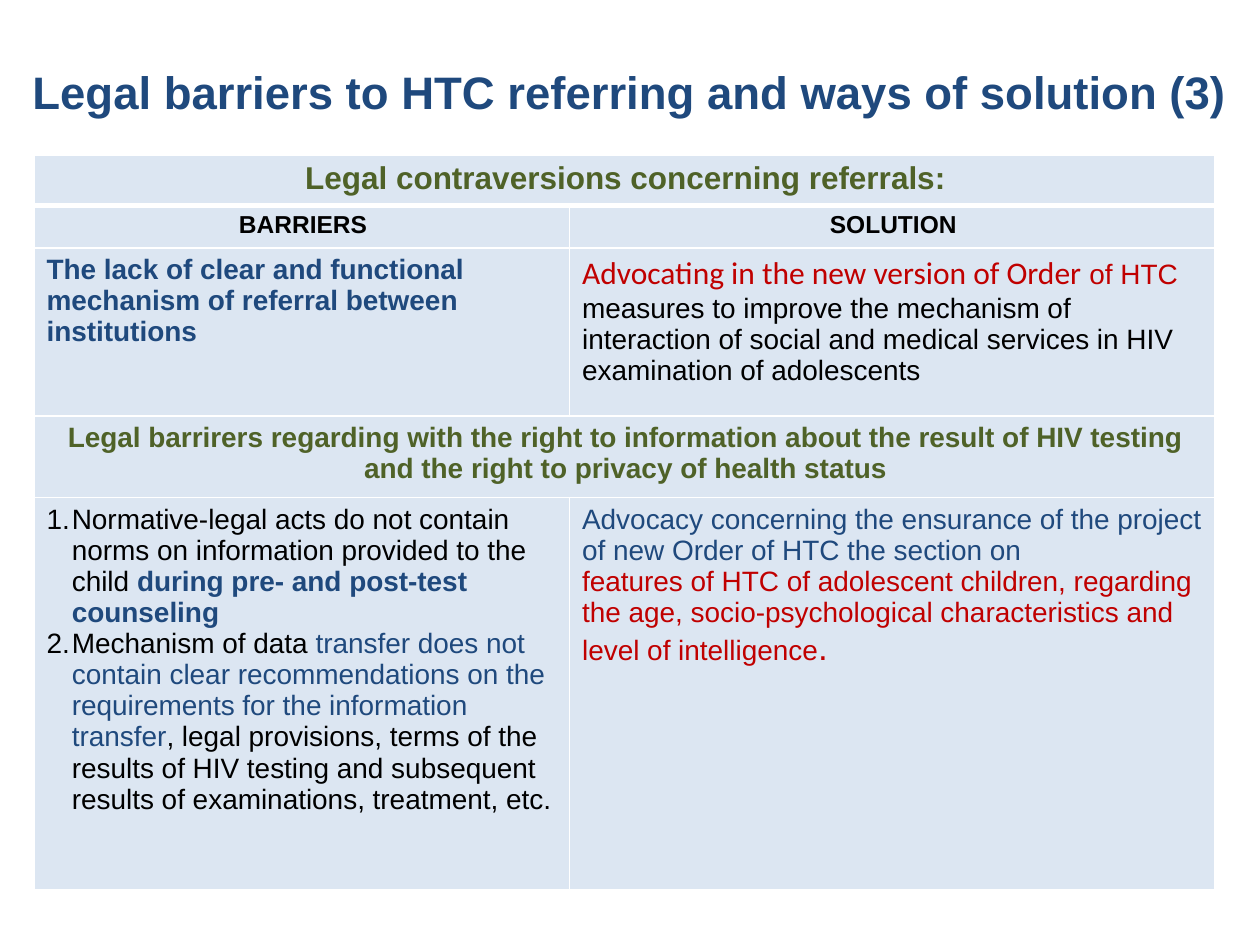
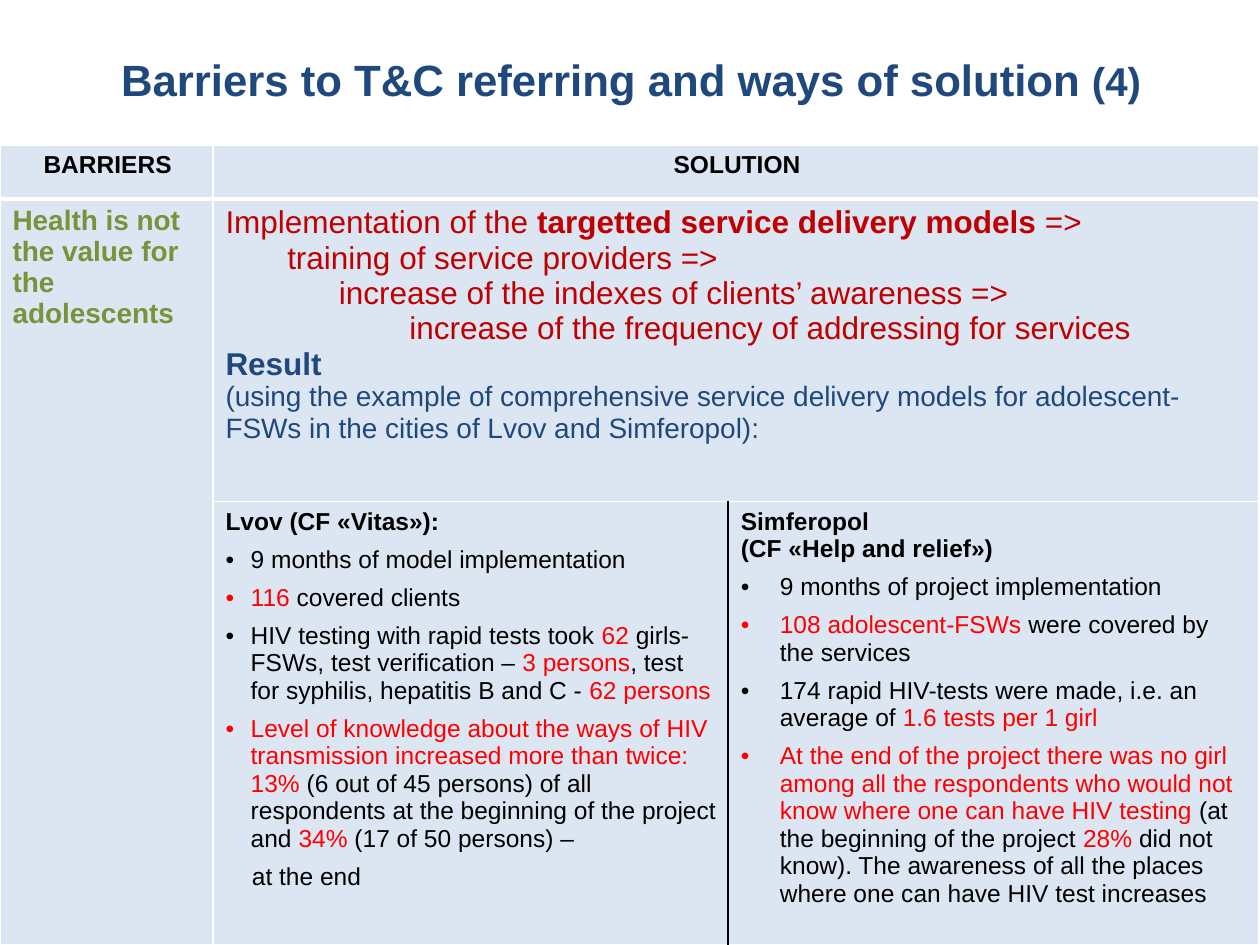
from functools import partial

from lxml.etree import SubElement
from pptx import Presentation
from pptx.dml.color import RGBColor
from pptx.enum.text import MSO_ANCHOR, PP_ALIGN
from pptx.oxml.ns import qn
from pptx.util import Inches, Pt

COLORS = {
    "navy": "1F497D",
    "olive": "4F6228",
    "green": "77933C",
    "crimson": "C00000",
    "red": "FF0000",
    "black": "000000",
    "white": "FFFFFF",
    "panel": "DCE6F2",
}
BULLET = ("buChar", "char", "•")
NUMBER = ("buAutoNum", "type", "arabicPeriod")


def span(text, color="black", size=16, bold=False, name="Arial"):
    return text, color, {"size": Pt(size), "bold": bold, "name": name}


def line(*spans, indent=0, hanging=0, marker=None, **layout):
    """Describe a paragraph; layout holds its alignment and spacing."""
    return spans, indent, hanging, marker, layout


small = partial(span, size=14)
large = partial(span, size=18)
numbered = partial(line, indent=0.2, hanging=0.2, marker=NUMBER)
centered = partial(line, alignment=PP_ALIGN.CENTER)


def bulleted(*spans, indent=0.2):
    return line(*spans, indent=indent, hanging=indent, marker=BULLET, space_before=Pt(6))


def write_lines(frame, lines):
    for index, (spans, indent, hanging, marker, layout) in enumerate(lines):
        para = frame.add_paragraph() if index else frame.paragraphs[0]
        for key, value in layout.items():
            setattr(para, key, value)
        properties = para._p.get_or_add_pPr()
        properties.set("marL", str(Inches(indent)))
        properties.set("indent", str(-Inches(hanging)))
        if marker:
            tag, key, value = marker
            SubElement(properties, qn("a:buFont"), typeface="Arial")
            SubElement(properties, qn(f"a:{tag}")).set(key, value)
        for text, color, font_format in spans:
            run = para.add_run()
            run.text = text
            run.font.color.rgb = RGBColor.from_string(COLORS[color])
            for key, value in font_format.items():
                setattr(run.font, key, value)


def add_title(page, left, top, width, height, *spans):
    box = page.shapes.add_textbox(Inches(left), Inches(top), Inches(width), Inches(height))
    box.text_frame.word_wrap = True
    box.text_frame.vertical_anchor = MSO_ANCHOR.MIDDLE
    write_lines(box.text_frame, [centered(*spans)])


def style_cell(cell, borders):
    """Fill a cell and rule its sides; borders overrides (colour, points) by side."""
    properties = cell._tc.get_or_add_tcPr()
    for side in "LRTB":
        color, width = borders.get(side, ("white", 1))
        rule = SubElement(properties, qn(f"a:ln{side}"), w=str(Pt(width)))
        fill = SubElement(rule, qn("a:solidFill"))
        SubElement(fill, qn("a:srgbClr"), val=COLORS[color])
    cell.fill.solid()
    cell.fill.fore_color.rgb = RGBColor.from_string(COLORS["panel"])
    cell.margin_right = Inches(0.08)


def add_table(page, left, top, columns, rows, merges, contents, borders):
    """Build a table; contents and borders are keyed by (row, column)."""
    frame = page.shapes.add_table(
        len(rows), len(columns), Inches(left), Inches(top),
        Inches(sum(columns)), Inches(sum(rows)),
    )
    table = frame.table
    table.first_row = table.horz_banding = False
    for column, width in zip(table.columns, columns):
        column.width = Inches(width)
    for row, height in zip(table.rows, rows):
        row.height = Inches(height)
    for start, end in merges:
        table.cell(*start).merge(table.cell(*end))
    for row in range(len(rows)):
        for column in range(len(columns)):
            place = row, column
            cell = table.cell(*place)
            style_cell(cell, borders.get(place, {}))
            if place in contents:
                write_lines(cell.text_frame, contents[place])


def heading(text):
    return [centered(small(text, bold=True))]


def header_rule(row, column_count):
    """Thick rule under the given row."""
    thick = ("white", 3)
    rules = {}
    for column in range(column_count):
        rules[row, column] = {"B": thick}
        rules[row + 1, column] = {"T": thick}
    return rules


def build_legal_barriers(page):
    add_title(page, 0, 0.3, 10, 0.85,
              span("Legal barriers to HTC referring and ways of solution (3)", "navy", 26, True))
    contents = {
        (0, 0): [centered(large("Legal contraversions concerning referrals:", "olive", bold=True))],
        (1, 0): heading("BARRIERS"),
        (1, 1): heading("SOLUTION"),
        (2, 0): [line(span("The lack of clear and functional mechanism of referral "
                           "between institutions", "navy", bold=True))],
        (2, 1): [line(
            large("Advocating in the new version of Order", "crimson", name="Calibri"),
            span(" of HTC ", "crimson"),
            span("measures to improve the mechanism of interaction of social and medical "
                 "services in HIV examination of adolescents"),
        )],
        (3, 0): [centered(span("Legal barrirers regarding with the right to information about "
                               "the result of HIV testing and the right to privacy of health "
                               "status", "olive", bold=True))],
        (4, 0): [
            numbered(
                span("Normative-legal acts do not contain norms on information provided "
                     "to the child "),
                span("during pre- and post-test counseling", "navy", bold=True),
            ),
            numbered(
                span("Mechanism of data "),
                span("transfer does not contain clear recommendations on the requirements "
                     "for the information transfer", "navy"),
                span(", legal provisions, terms of the results of HIV testing and subsequent "
                     "results of examinations, treatment, etc."),
            ),
        ],
        (4, 1): [
            line(span("Advocacy concerning the ensurance of the project of new Order of HTC "
                      "the section on", "navy")),
            line(
                span("features of HTC of adolescent children, regarding the age, "
                     "socio-psychological characteristics and level of intelligence", "crimson"),
                span(".", "crimson", 20),
            ),
        ],
    }
    add_table(page, 0.27, 1.23, [4.25, 5.12], [0.39, 0.34, 1.33, 0.65, 3.11],
              [((0, 0), (0, 1)), ((3, 0), (3, 1))], contents, header_rule(0, 2))


def build_service_models(page):
    add_title(page, 0.51, 0, 9, 1.25,
              span("Barriers to T&C referring and ways of solution ", "navy", 25, True),
              span("(4)", "navy", 23, True))
    steps = [
        (0.49, "training of service providers =>"),
        (0.9, "increase of the indexes of clients’ awareness =>"),
        (1.46, "increase of the frequency of addressing for services"),
    ]
    bullet = partial(bulleted, indent=0.31)
    contents = {
        (0, 0): heading("BARRIERS"),
        (0, 1): heading("SOLUTION"),
        (1, 0): [line(span("Health is not the value for the adolescents", "green", bold=True))],
        (1, 1): [
            line(
                large("Implementation of the ", "crimson"),
                large("targetted service delivery models ", "crimson", bold=True),
                large("=>", "crimson"),
            ),
            *[line(large(text, "crimson"), indent=indent) for indent, text in steps],
            line(large("Result", "navy", bold=True)),
            line(span("(using the example of comprehensive service delivery models for "
                      "adolescent-FSWs in the cities of Lvov and Simferopol):", "navy")),
        ],
        (2, 1): [
            line(small("Lvov (CF «Vitas»):", bold=True)),
            bulleted(small("9 months of model implementation")),
            bulleted(small("116", "red"), small(" covered clients")),
            bulleted(
                small("HIV testing with rapid tests took "),
                small("62", "red"),
                small(" girls-FSWs, test verification – "),
                small("3 persons", "red"),
                small(", test for syphilis, hepatitis B and C - "),
                small("62 persons", "red"),
            ),
            bulleted(
                small("Level of knowledge about the ways of HIV transmission increased "
                      "more than twice: 13% ", "red"),
                small("(6 out of 45 persons) of all respondents at the beginning of the "
                      "project and "),
                small("34%", "red"),
                small(" (17 of 50 persons) –"),
            ),
            line(small("at the end"), indent=0.21, space_before=Pt(6)),
        ],
        (2, 2): [
            line(small("Simferopol", bold=True)),
            line(small("(CF «Help and relief»)", bold=True)),
            bullet(small("9 months of project implementation")),
            bullet(small("108 adolescent-FSWs ", "red"), small("were covered by the services")),
            bullet(
                small("174 rapid HIV-tests were made, i.e. an average of "),
                small("1.6 tests per 1 girl", "red"),
            ),
            bullet(
                small("At the end of the project there was no girl among all the respondents "
                      "who would not know where one can have HIV testing ", "red"),
                small("(at the beginning of the project "),
                small("28%", "red"),
                small(" did not know). The awareness of all the places where one can have "
                      "HIV test increases"),
            ),
        ],
    }
    divider = ("black", 1)
    borders = header_rule(0, 3) | {(2, 1): {"R": divider}, (2, 2): {"L": divider}}
    add_table(page, 0, 1.15, [1.69, 4.09, 4.21], [0.43, 2.4, 3.52],
              [((0, 1), (0, 2)), ((1, 0), (2, 0)), ((1, 1), (1, 2))], contents, borders)


def main():
    deck = Presentation()
    deck.slide_width = Inches(10)
    deck.slide_height = Inches(7.5)
    for build in (build_legal_barriers, build_service_models):
        build(deck.slides.add_slide(deck.slide_layouts[6]))
    deck.save("out.pptx")


if __name__ == "__main__":
    main()
